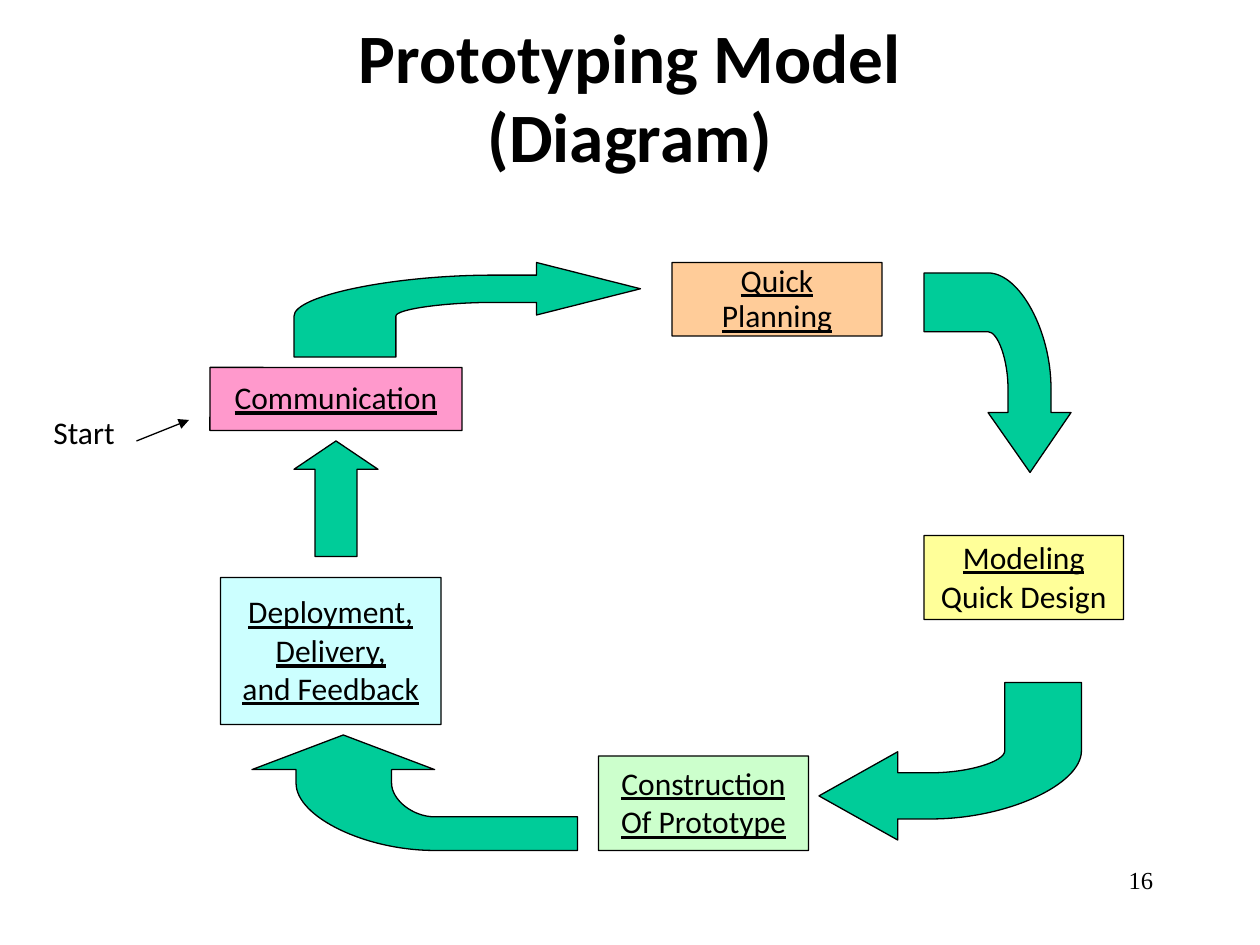
from dataclasses import dataclass

import pptx
import pptx.dml.color
import pptx.enum.shapes
import pptx.enum.text
import pptx.oxml
import pptx.oxml.ns
import pptx.util

PX = 7620  # EMU per px, 120 px to the inch

RGB = pptx.dml.color.RGBColor
BLACK = RGB(0x00, 0x00, 0x00)
GREEN = RGB(0x00, 0xCC, 0x99)
PINK = RGB(0xFF, 0x99, 0xCC)
ORANGE = RGB(0xFF, 0xCC, 0x99)
YELLOW = RGB(0xFF, 0xFF, 0x99)
MINT = RGB(0xCC, 0xFF, 0xCC)
AQUA = RGB(0xCC, 0xFF, 0xFF)

ALIGN = pptx.enum.text.PP_ALIGN
ANCHOR = pptx.enum.text.MSO_ANCHOR
AUTO_SIZE = pptx.enum.text.MSO_AUTO_SIZE
SHAPE = pptx.enum.shapes.MSO_SHAPE
NS = pptx.oxml.ns.nsdecls("a")

LABEL = {"name": "Calibri", "size": pptx.util.Pt(18)}
TITLE = {"name": "Calibri", "size": pptx.util.Pt(39.6), "bold": True}
NUMBER = {"name": "Times New Roman", "size": pptx.util.Pt(14)}


@dataclass(frozen=True)
class Stage:
    """One step of the cycle; lines after the underlined ones are plain."""
    x: int
    y: int
    w: int
    h: int
    fill: RGB
    lines: tuple
    plain: tuple = ()


@dataclass(frozen=True)
class Bend:
    """A curve that rounds off a corner on its way to an end point."""
    corner: tuple
    end: tuple


STAGES = [
    Stage(200, 350, 240, 60, PINK, ("Communication",)),
    Stage(640, 250, 200, 70, ORANGE, ("Quick Planning",)),
    Stage(880, 510, 190, 80, YELLOW, ("Modeling",), ("Quick Design",)),
    Stage(570, 720, 200, 90, MINT, ("Construction", "Of Prototype")),
    Stage(210, 550, 210, 140, AQUA, ("Deployment,", "Delivery,", "and Feedback")),
]

ARROWS = [
    # Communication to planning
    [(280, 340), (280, 301), Bend((280, 262), (470, 262)), (511, 262), (511, 250),
     (610, 275), (511, 300), (511, 288), (470, 288), Bend((377, 288), (377, 301)),
     (377, 340)],
    # Planning to modeling
    [(880, 260), (941, 260), Bend((1001, 260), (1001, 370)), (1001, 393), (1020, 393),
     (981, 450), (941, 393), (960, 393), (960, 370), Bend((960, 316), (941, 316)),
     (880, 316)],
    # Modeling to construction
    [(1030, 650), (1030, 715), Bend((1030, 780), (887, 780)), (855, 780), (855, 800),
     (780, 758), (855, 716), (855, 736), (887, 736), Bend((957, 736), (957, 715)),
     (957, 650)],
    # Construction to deployment
    [(550, 810), (414, 810), Bend((282, 810), (282, 746)), (282, 733), (240, 733),
     (327, 700), (414, 733), (373, 733), (373, 746), Bend((373, 778), (414, 778)),
     (550, 778)],
    # Deployment to communication
    [(300, 530), (300, 447), (280, 447), (320, 420), (360, 447), (340, 447), (340, 530)],
]


def emu(*lengths: float) -> list:
    return [round(n * PX) for n in lengths]


def write(p, text: str, fmt: dict, align, spacing=None) -> None:
    p.text = text
    p.alignment = align
    p.line_spacing = spacing
    for r in p.runs:
        r.font.color.rgb = BLACK
        for key, value in fmt.items():
            setattr(r.font, key, value)


def paint(sp, fill: RGB) -> None:
    sp.shadow.inherit = False
    sp.fill.solid()
    sp.fill.fore_color.rgb = fill
    sp.line.color.rgb = BLACK
    sp.line.width = pptx.util.Pt(0.75)


def add_box(s, *box: int):
    sp = s.shapes.add_shape(SHAPE.ROUNDED_RECTANGLE, *emu(*box))
    sp.adjustments[0] = 0.003
    return sp


def add_stage(s, stage: Stage) -> None:
    sp = add_box(s, stage.x, stage.y, stage.w, stage.h)
    paint(sp, stage.fill)
    tf = sp.text_frame
    tf.word_wrap = True
    tf.vertical_anchor = ANCHOR.MIDDLE
    for i, line in enumerate(stage.lines + stage.plain):
        p = tf.add_paragraph() if i else tf.paragraphs[0]
        fmt = LABEL | {"underline": line in stage.lines}
        write(p, line, fmt, ALIGN.CENTER, None if i else 0.95)


def midpoint(a: tuple, b: tuple) -> tuple:
    return (a[0] + b[0]) / 2, (a[1] + b[1]) / 2


def add_block_arrow(s, outline: list) -> None:
    points, bends = [], []
    for part in outline:
        if isinstance(part, Bend):
            bends.append(len(points) - 1)
            points += [midpoint(points[-1], part.corner),
                       midpoint(part.corner, part.end), part.end]
        else:
            points.append(part)
    points = [emu(*point) for point in points]
    builder = s.shapes.build_freeform(*points[0])
    builder.add_line_segments(points[1:], close=True)
    sp = builder.convert_to_shape()
    paint(sp, GREEN)

    # Each bend's two handles and end point become one cubic curve
    segments = list(sp._element.iter(pptx.oxml.ns.qn("a:lnTo")))
    for i in bends:
        curve = pptx.oxml.parse_xml(f"<a:cubicBezTo {NS}/>")
        segments[i].addprevious(curve)
        for segment in segments[i:i + 3]:
            curve.append(segment[0])
            segment.getparent().remove(segment)


def add_start(s) -> None:
    sp = add_box(s, 30, 390, 100, 60)
    sp.shadow.inherit = False
    sp.fill.background()
    sp.line.fill.background()
    tf = sp.text_frame
    tf.word_wrap = False
    tf.auto_size = AUTO_SIZE.SHAPE_TO_FIT_TEXT
    tf.vertical_anchor = ANCHOR.TOP
    write(tf.paragraphs[0], "Start", LABEL, ALIGN.CENTER, 0.95)


def add_pointer(s, start: tuple, end: tuple) -> None:
    line = s.shapes.add_connector(pptx.enum.shapes.MSO_CONNECTOR.STRAIGHT,
                                  *emu(*start, *end))
    line.line.color.rgb = BLACK
    line.line.width = pptx.util.Pt(0.75)
    line.line._get_or_add_ln().append(
        pptx.oxml.parse_xml(f'<a:tailEnd {NS} type="triangle"/>'))
    line._element.spPr.append(pptx.oxml.parse_xml(f"<a:effectLst {NS}/>"))


def main() -> None:
    prs = pptx.Presentation()
    prs.slide_width, prs.slide_height = emu(1200, 900)
    s = prs.slides.add_slide(prs.slide_layouts[5])

    # Slide number
    tf = s.shapes.add_textbox(*emu(860, 820, 250, 60)).text_frame
    tf.word_wrap = True
    write(tf.paragraphs[0], "16", NUMBER, ALIGN.RIGHT, 0.95)

    # Title
    title = s.shapes.title
    title.left, title.top, title.width, title.height = emu(90, 5, 1020, 179)
    tf = title.text_frame
    tf.auto_size = AUTO_SIZE.NONE
    tf.vertical_anchor = ANCHOR.MIDDLE
    write(tf.paragraphs[0], "Prototyping Model\v(Diagram)", TITLE, ALIGN.CENTER, 0.95)

    # Cycle
    for stage in STAGES:
        add_stage(s, stage)
    for outline in ARROWS:
        add_block_arrow(s, outline)

    # Entry point
    add_start(s)
    add_pointer(s, (130, 420), (180, 400))

    prs.save("out.pptx")


if __name__ == "__main__":
    main()
